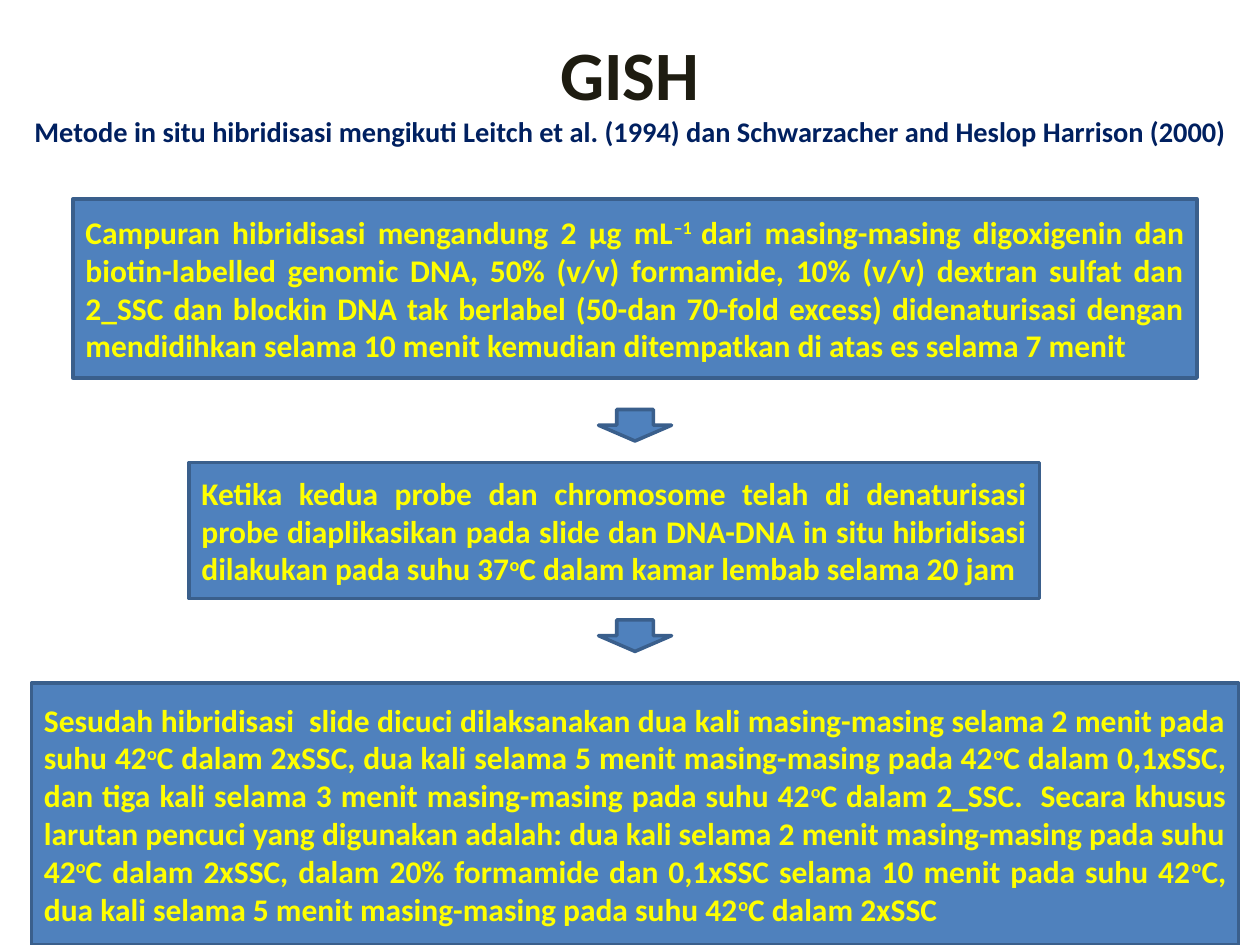
"""Build the GISH hybridisation method slide."""
from pptx import Presentation
from pptx.dml.color import RGBColor
from pptx.enum import shapes, text
from pptx.util import Inches, Pt


def color(value):
    return RGBColor.from_string(value)


def style(run, size, value):
    run.font.name = "Calibri"
    run.font.size = Pt(size)
    run.font.bold = True
    run.font.color.rgb = color(value)


deck = Presentation()
deck.slide_width, deck.slide_height = Inches(10), Inches(7.5)
slide = deck.slides.add_slide(deck.slide_layouts[6])

heading = slide.shapes.add_textbox(Inches(0), Inches(0.17), Inches(10), Inches(1.08)).text_frame
heading.word_wrap = True
heading.vertical_anchor = text.MSO_ANCHOR.MIDDLE
title = heading.paragraphs[0]
title.text = (
    "GISH\vMetode in situ hibridisasi mengikuti Leitch et al. (1994) "
    "dan Schwarzacher and Heslop Harrison (2000)"
)
title.alignment = text.PP_ALIGN.CENTER
for run, size, value in zip(title.runs, (39.6, 16.2), ("1E1C11", "002060")):
    style(run, size, value)

# Every second part between carets is superscript.
steps = [
    (0.58, 1.58, 8.92, 1.42,
     "Campuran hibridisasi mengandung 2 µg mL^–1 ^dari masing-masing digoxigenin dan "
     "biotin-labelled genomic DNA, 50% (v/v) formamide, 10% (v/v) dextran sulfat dan "
     "2_SSC dan blockin DNA tak berlabel (50-dan 70-fold excess) didenaturisasi dengan "
     "mendidihkan selama 10 menit kemudian ditempatkan di atas es selama 7 menit"),
    (1.5, 3.67, 6.75, 1.08,
     "Ketika kedua probe dan chromosome telah di denaturisasi probe diaplikasikan pada "
     "slide dan DNA-DNA in situ hibridisasi dilakukan pada suhu 37^o^C dalam kamar "
     "lembab selama 20 jam"),
    (0.25, 5.42, 9.58, 2.08,
     "Sesudah hibridisasi  slide dicuci dilaksanakan dua kali masing-masing selama 2 "
     "menit pada suhu 42^o^C dalam 2xSSC, dua kali selama 5 menit masing-masing pada "
     "42^o^C dalam 0,1xSSC, dan tiga kali selama 3 menit masing-masing pada suhu "
     "42^o^C dalam 2_SSC.  Secara khusus larutan pencuci yang digunakan adalah: dua "
     "kali selama 2 menit masing-masing pada suhu 42^o^C dalam 2xSSC, dalam 20% "
     "formamide dan 0,1xSSC selama 10 menit pada suhu 42^o^C, dua kali selama 5 menit "
     "masing-masing pada suhu 42^o^C dalam 2xSSC"),
]
arrows = [(4.75, top, 0.58, 0.25, "") for top in (3.25, 4.92)]

for left, top, width, height, wording in steps + arrows:
    kind = shapes.MSO_SHAPE.RECTANGLE if wording else shapes.MSO_SHAPE.DOWN_ARROW
    step = slide.shapes.add_shape(kind, Inches(left), Inches(top), Inches(width), Inches(height))
    step.shadow.inherit = False
    step.fill.solid()
    step.fill.fore_color.rgb = color("4F81BD")
    step.line.color.rgb = color("3A5F8C")
    step.line.width = Pt(2)
    if not wording:
        continue
    step.text_frame.word_wrap = True
    step.text_frame.vertical_anchor = text.MSO_ANCHOR.MIDDLE
    paragraph = step.text_frame.paragraphs[0]
    paragraph.alignment = text.PP_ALIGN.JUSTIFY
    for index, part in enumerate(wording.split("^")):
        run = paragraph.add_run()
        run.text = part
        style(run, 18, "FFFF00")
        if index % 2:
            run._r.get_or_add_rPr().set("baseline", "30000")

deck.save("out.pptx")
